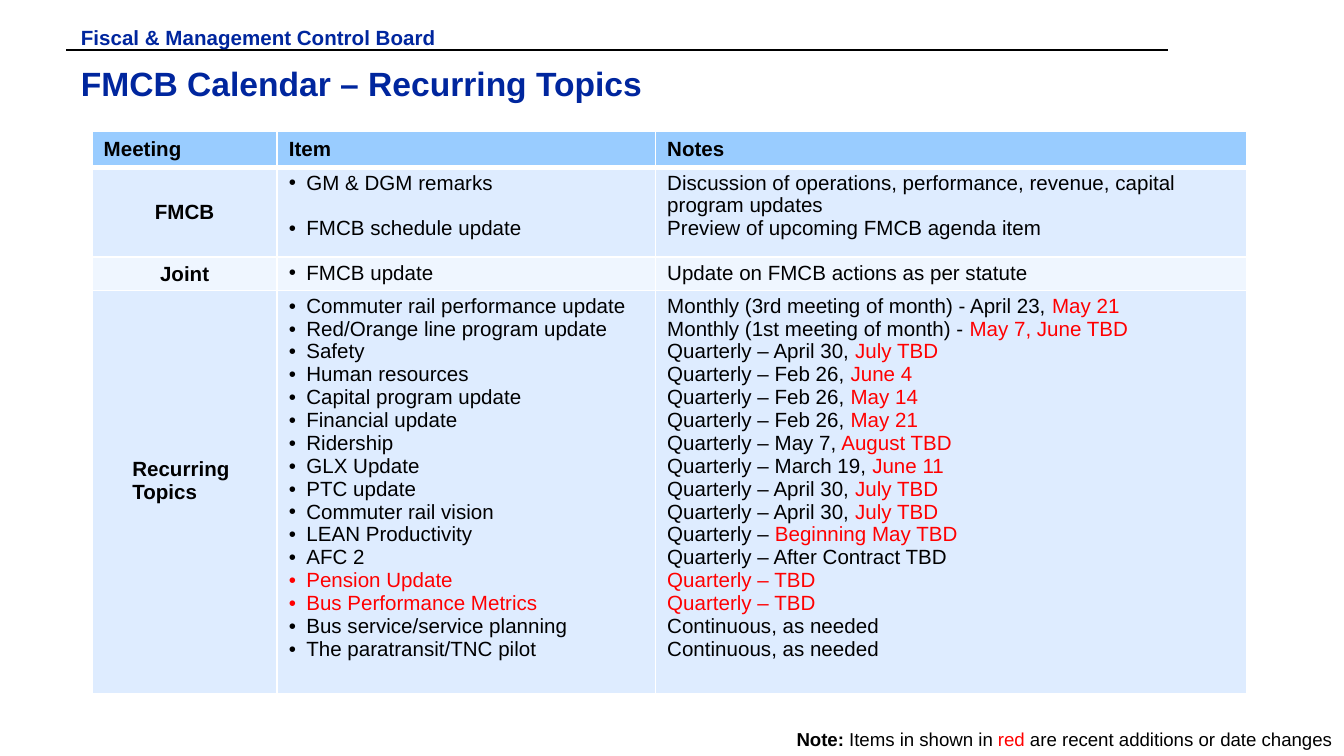
from lxml import etree
from pptx import Presentation
from pptx.dml.color import RGBColor
from pptx.enum.shapes import MSO_CONNECTOR
from pptx.enum.text import MSO_ANCHOR, PP_ALIGN
from pptx.oxml.ns import qn
from pptx.util import Cm, Pt

STRAIGHT = MSO_CONNECTOR.STRAIGHT
TOP, MIDDLE = MSO_ANCHOR.TOP, MSO_ANCHOR.MIDDLE
LEFT, CENTER, RIGHT = PP_ALIGN.LEFT, PP_ALIGN.CENTER, PP_ALIGN.RIGHT

FONT = "Arial"
NAVY, BLACK, RED, WHITE = "00269E", "000000", "FF0000", "FFFFFF"
HEADER_FILL, DARK_BAND, LIGHT_BAND = "99CCFF", "DEECFF", "EFF6FF"
BULLET_INDENT = Cm(0.33)
COLUMN_WIDTHS = (3.5, 7.15, 11.17)
ROW_HEIGHTS = (0.69, 1.7, 0.61, 7.14)

# Each topic has the black part and the red part of its note.
RECURRING_TOPICS = (
    ("Commuter rail performance update", "Monthly (3rd meeting of month) - April 23, ", "May 21"),
    ("Red/Orange line program update", "Monthly (1st meeting of month) - ", "May 7, June TBD"),
    ("Safety", "Quarterly – April 30, ", "July TBD"),
    ("Human resources", "Quarterly – Feb 26, ", "June 4"),
    ("Capital program update", "Quarterly – Feb 26, ", "May 14"),
    ("Financial update", "Quarterly – Feb 26, ", "May 21"),
    ("Ridership", "Quarterly – May 7,", " August TBD"),
    ("GLX Update", "Quarterly – March 19, ", "June 11"),
    ("PTC update", "Quarterly – April 30, ", "July TBD"),
    ("Commuter rail vision", "Quarterly – April 30, ", "July TBD"),
    ("LEAN Productivity", "Quarterly – ", "Beginning May TBD"),
    ("AFC 2", "Quarterly – After Contract TBD", ""),
    ("Pension Update", "", "Quarterly – TBD"),
    ("Bus Performance Metrics", "", "Quarterly – TBD"),
    ("Bus service/service planning", "Continuous, as needed", ""),
    ("The paratransit/TNC pilot", "Continuous, as needed", ""),
)


def rgb(value):
    """Turn a hex string into a colour."""
    return RGBColor.from_string(value)


def add_run(paragraph, text, size=11, color=BLACK, bold=False):
    """Append one formatted run to a paragraph."""
    run = paragraph.add_run()
    run.text = text
    run.font.name = FONT
    run.font.size = Pt(size)
    run.font.bold = bold
    run.font.color.rgb = rgb(color)


def add_bullet(paragraph):
    """Give a paragraph a round bullet with a hanging indent."""
    properties = paragraph._p.get_or_add_pPr()
    properties.set("marL", str(BULLET_INDENT))
    properties.set("indent", str(-BULLET_INDENT))
    etree.SubElement(properties, qn("a:buFont"), typeface=FONT)
    etree.SubElement(properties, qn("a:buChar"), char="•")


def write_lines(frame, lines, align=LEFT, bullets=False):
    """Fill a text frame with lines, each a list of (text, format) runs."""
    for index, runs in enumerate(lines):
        paragraph = frame.add_paragraph() if index else frame.paragraphs[0]
        paragraph.alignment = align
        if bullets:
            add_bullet(paragraph)
        for text, style in runs:
            add_run(paragraph, text, **style)


def add_text(slide, left, top, width, height, runs, align=LEFT, wrap=True):
    """Add a one-line text box."""
    box = slide.shapes.add_textbox(Cm(left), Cm(top), Cm(width), Cm(height))
    frame = box.text_frame
    frame.word_wrap = wrap
    frame.vertical_anchor = TOP
    frame.margin_left = frame.margin_right = Cm(0.23)
    frame.margin_top = frame.margin_bottom = Cm(0.1)
    write_lines(frame, [runs], align)


def add_rule(slide, left, right, y):
    """Add the thin black line below the board name."""
    rule = slide.shapes.add_connector(STRAIGHT, Cm(left), Cm(y), Cm(right), Cm(y))
    rule.line.color.rgb = rgb(BLACK)
    rule.line.width = Pt(1)
    etree.SubElement(rule._element.spPr, qn("a:effectLst"))


def set_borders(cell, row):
    """Draw white cell borders, thicker between header and body."""
    widths = {"L": 1, "R": 1, "T": 3 if row == 1 else 1, "B": 3 if row == 0 else 1}
    properties = cell._tc.get_or_add_tcPr()
    for position, (side, width) in enumerate(widths.items()):
        border = etree.Element(qn(f"a:ln{side}"), w=str(Pt(width)))
        fill = etree.SubElement(border, qn("a:solidFill"))
        etree.SubElement(fill, qn("a:srgbClr"), val=WHITE)
        properties.insert(position, border)


def add_calendar(slide):
    """Add the empty calendar table with its bands and borders."""
    table = slide.shapes.add_table(
        len(ROW_HEIGHTS), len(COLUMN_WIDTHS), Cm(1.74), Cm(2.47),
        Cm(sum(COLUMN_WIDTHS)), Cm(sum(ROW_HEIGHTS))).table
    for column, width in zip(table.columns, COLUMN_WIDTHS):
        column.width = Cm(width)
    fills = (HEADER_FILL, DARK_BAND, LIGHT_BAND, DARK_BAND)
    for row, (height, fill) in enumerate(zip(ROW_HEIGHTS, fills)):
        table.rows[row].height = Cm(height)
        for column, cell in enumerate(table.rows[row].cells):
            cell.fill.solid()
            cell.fill.fore_color.rgb = rgb(fill)
            cell.margin_left = cell.margin_right = Cm(0.22)
            cell.margin_top = cell.margin_bottom = Cm(0.08)
            cell.vertical_anchor = MIDDLE if row == 0 or column == 0 else TOP
            set_borders(cell, row)
    return table


def fill_calendar(table):
    """Write the headings, meetings, items and notes."""
    bold, plain, red = {"bold": True}, {}, {"color": RED}
    for column, heading in enumerate(("Meeting", "Item", "Notes")):
        write_lines(table.cell(0, column).text_frame, [[(heading, bold)]])

    meetings = (["FMCB"], ["Joint"], ["Recurring", "Topics"])
    items = (
        [[("GM & DGM remarks", plain)], [("FMCB schedule update", plain)]],
        [[("FMCB update", plain)]],
        [[(topic, plain if black else red)] for topic, black, _ in RECURRING_TOPICS],
    )
    notes = (
        [[("Discussion of operations, performance, revenue, capital program updates", plain)],
         [("Preview of upcoming FMCB agenda item", plain)]],
        [[("Update on FMCB actions as per statute", plain)]],
        [[(text, style) for text, style in ((black, plain), (late, red)) if text]
         for _, black, late in RECURRING_TOPICS],
    )
    for row, (meeting, item, note) in enumerate(zip(meetings, items, notes), 1):
        align = CENTER if len(meeting) == 1 else LEFT
        write_lines(table.cell(row, 0).text_frame, [[(name, bold)] for name in meeting], align)
        write_lines(table.cell(row, 1).text_frame, item, bullets=True)
        write_lines(table.cell(row, 2).text_frame, note)

    table.cell(1, 1).text_frame.paragraphs[1].space_before = Pt(12.3)
    recurring = table.cell(3, 0)
    recurring.margin_left = Cm(0.76)
    recurring.margin_bottom = Cm(0.51)


def main():
    """Build the recurring topics slide."""
    presentation = Presentation()
    presentation.slide_width, presentation.slide_height = Cm(25.4), Cm(14.28)
    slide = presentation.slides.add_slide(presentation.slide_layouts[6])

    add_rule(slide, 1.25, 22.07, 0.94)
    add_text(slide, 1.3, 1.09, 21.23, 1.22,
             [("FMCB Calendar – Recurring Topics", {"size": 18, "color": NAVY, "bold": True})])
    add_text(slide, 1.3, 0.37, 8.66, 0.48,
             [("Fiscal & Management Control Board", {"color": NAVY, "bold": True})])
    fill_calendar(add_calendar(slide))
    add_text(slide, 14.73, 13.64, 10.67, 0.66, [
        ("Note: ", {"size": 10, "bold": True}),
        ("Items in shown in ", {"size": 10}),
        ("red", {"size": 10, "color": RED}),
        (" are recent additions or date changes", {"size": 10}),
    ], RIGHT, wrap=False)
    presentation.save("out.pptx")


if __name__ == "__main__":
    main()
